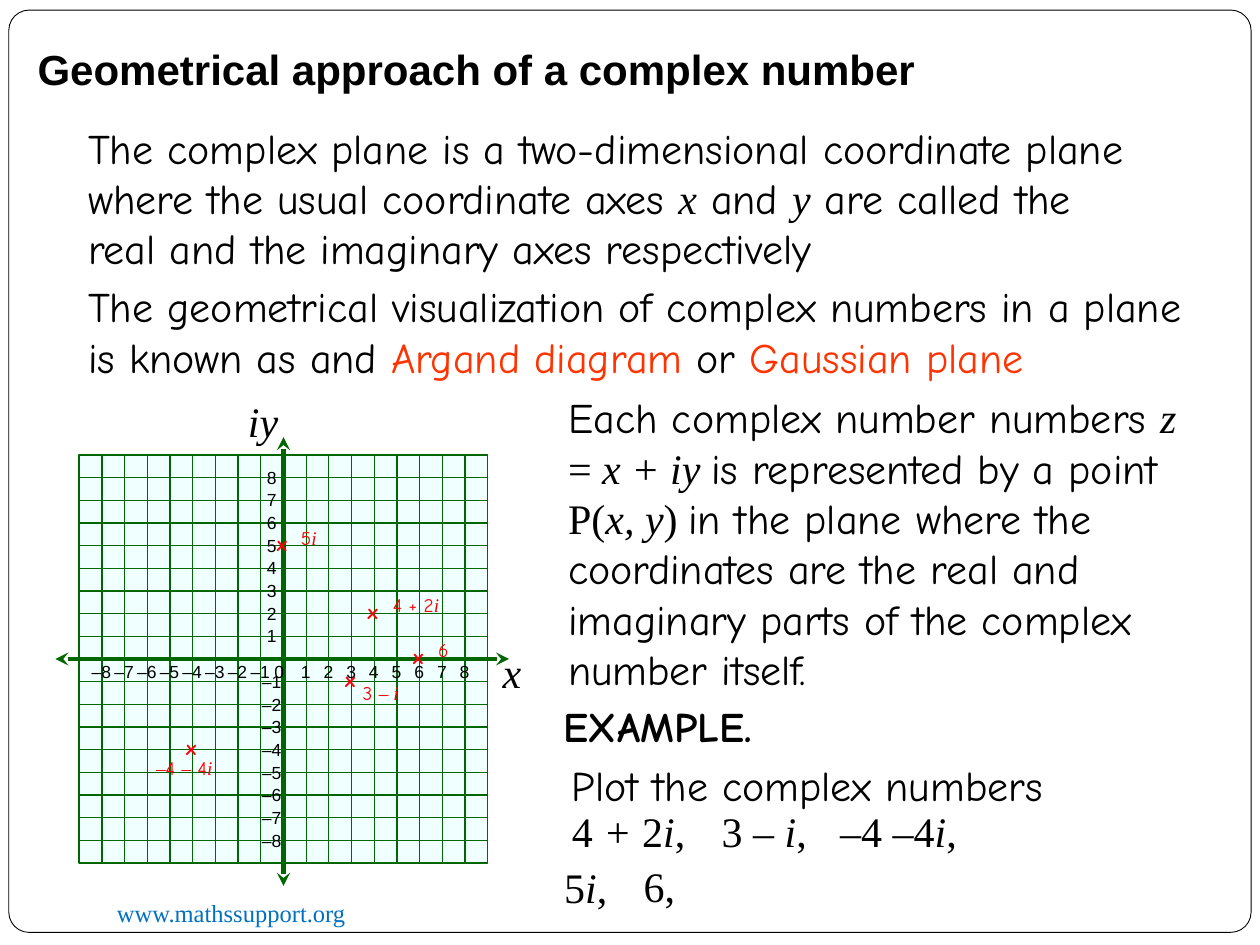
from lxml.etree import SubElement
from pptx import Presentation
from pptx.dml.color import RGBColor
from pptx.enum.shapes import MSO_CONNECTOR, MSO_SHAPE
from pptx.oxml.ns import qn
from pptx.util import Inches, Pt

BLACK, RED, ORANGE, GREEN, BLUE = "000000", "FF0000", "FF3300", "006600", "0070C0"
FACES = {
    "C": {"name": "Comic Neue"},
    "CB": {"name": "Comic Neue", "bold": True},
    "T": {"name": "Times New Roman"},
    "I": {"name": "Times New Roman", "italic": True},
    "A": {"name": "Arial"},
    "AB": {"name": "Arial", "bold": True},
}
POINTS = [
    (4, 2, 0.05, -0.21, 0.6, [("4 + 2", "C"), ("i", "I")]),
    (3, -1, -0.01, -0.05, 0.6, [("3 ", "C"), ("– ", "T"), ("i", "I")]),
    (-4, -4, -0.39, 0, 0.75, [("–", "T"), ("4 ", "C"), ("–", "T"), (" 4", "C"), ("i", "I")]),
    (0, 5, 0.04, -0.2, 0.6, [("5", "C"), ("i", "I")]),
    (6, 0, 0.05, -0.21, 0.6, [("6", "C")]),
]
PLANE = [
    ("The complex plane is a two-dimensional coordinate plane where the usual coordinate axes ", "C"),
    ("x", "I"), (" and ", "C"), ("y", "I"),
    (" are called the real and the imaginary axes respectively", "C"),
]
NAMES = [
    ("The geometrical visualization of complex numbers in a plane is known as and ", "C"),
    ("Argand diagram ", "C", ORANGE), ("or ", "C"), ("Gaussian plane", "C", ORANGE),
]
POINT_RULE = [
    ("Each complex number numbers ", "C"), ("z", "I"), (" = ", "T"), ("x + iy ", "I"),
    ("is represented by a point ", "C"), ("P(", "T"), ("x, y", "I"), (") ", "T"),
    ("in the plane where the coordinates are the real and imaginary parts "
     "of the complex number itself.", "C"),
]
NUMBERS = [
    (0.07, 0.83, [("4", "T"), (" + ", "I"), ("2", "T"), ("i", "I"), (",", "T")]),
    (1.26, 0.83, [("3", "T"), (" – i", "I"), (",", "T")]),
    (2.2, 0.83, [("–", "I"), ("4", "T"), (" –", "I"), ("4", "T"), ("i", "I"), (",", "T")]),
    (0.01, 1.28, [("5", "T"), ("i", "I"), (",", "T")]),
    (0.64, 1.27, [("6,", "T")]),
]


def rgb(color):
    """Turn a hex string into a colour."""
    return RGBColor.from_string(color)


def add_text(s, box, runs, size=24, color=BLACK, wrap=True):
    """Place one paragraph of (text, face[, colour]) runs in a box."""
    tf = s.shapes.add_textbox(*map(Inches, box)).text_frame
    tf.word_wrap = wrap
    p = tf.paragraphs[0]
    for text, face, *own in runs:
        r = p.add_run()
        r.text = text
        for key, value in {"size": Pt(size), **FACES[face]}.items():
            setattr(r.font, key, value)
        r.font.color.rgb = rgb(own[0] if own else color)


def add_panel(s, kind, box, fill, line, width):
    """Place a filled, outlined shape."""
    sp = s.shapes.add_shape(kind, *map(Inches, box))
    sp.shadow.inherit = False
    sp.fill.solid()
    sp.fill.fore_color.rgb = rgb(fill)
    sp.line.color.rgb = rgb(line)
    sp.line.width = Pt(width)
    return sp


def add_line(s, x1, y1, x2, y2, width=0.75, arrows=False):
    """Draw a green line, with stealth arrowheads on an axis."""
    c = s.shapes.add_connector(MSO_CONNECTOR.STRAIGHT, *map(Inches, (x1, y1, x2, y2)))
    c.line.color.rgb = rgb(GREEN)
    c.line.width = Pt(width)
    if arrows:
        ln = c.line._get_or_add_ln()
        for end in ("a:headEnd", "a:tailEnd"):
            SubElement(ln, qn(end), type="stealth")
    SubElement(c._element.spPr, qn("a:effectLst"))


def add_frame(s, x, y, w, h):
    """Draw the rounded slide border and the footer address."""
    sp = add_panel(s, MSO_SHAPE.ROUNDED_RECTANGLE, (x, y, w, h), "FFFFFF", BLACK, 0.5)
    sp.adjustments[0] = 0.022
    add_text(s, (x + 0.76, y + h - 0.32, 3.25, 0.34), [("www.mathssupport.org", "T")], 14, BLUE)


def add_axis_label(s, cx, cy, n):
    """Centre an axis number on a point."""
    w = 0.36 if n < 0 else 0.28
    text = str(n).replace("-", "–")
    add_text(s, (cx - w / 2, cy - 0.135, w, 0.27), [(text, "A")], 10, wrap=False)


def add_argand(s, x, y, size, half=9):
    """Draw the grid, axes, numbers and plotted points of the diagram."""
    step = size / (2 * half)
    ox, oy = x + size / 2, y + size / 2
    add_panel(s, MSO_SHAPE.RECTANGLE, (x, y, size, size), "F0FFFF", GREEN, 1)
    ticks = [n for n in range(1 - half, half) if n]
    for n in ticks:
        add_line(s, x, oy - n * step, x + size, oy - n * step)
        add_line(s, ox + n * step, y, ox + n * step, y + size)
    add_line(s, x - 0.19, oy, x + size + 0.17, oy, 2.5, True)
    add_line(s, ox, y - 0.14, ox, y + size + 0.18, 2.5, True)
    for n in ticks:
        add_axis_label(s, ox + n * step, oy + 0.1, n)
        add_axis_label(s, ox - 0.09, oy - n * step, n)
    add_axis_label(s, ox - 0.03, oy + 0.1, 0)
    add_text(s, (ox - 0.38, y - 0.52, 0.54, 0.5), [("iy", "I")])
    add_text(s, (x + size + 0.02, oy - 0.15, 0.38, 0.5), [("x", "I")])
    for re, im, dx, dy, w, runs in POINTS:
        px, py = ox + re * step, oy - im * step
        add_text(s, (px - 0.15, py - 0.17, 0.43, 0.3), [("x", "CB")], 12, RED)
        add_text(s, (px + dx, py + dy, w, 0.29), runs, 11, RED)


def add_intro(s, x, y, w):
    """Place the title and the two introductory paragraphs."""
    add_text(s, (x, y, 8.05, 0.5), [("Geometrical approach of a complex number", "AB")])
    add_text(s, (x + 0.4, y + 0.62, w - 0.76, 1.31), PLANE)
    add_text(s, (x + 0.4, y + 1.88, w - 0.4, 0.91), NAMES)


def add_example(s, x, y):
    """Place the example heading, the task and its numbers."""
    add_text(s, (x, y, 1.92, 0.5), [("EXAMPLE.", "CB")], wrap=False)
    add_text(s, (x + 0.07, y + 0.47, 4.21, 0.5), [("Plot the complex numbers", "C")])
    for dx, dy, runs in NUMBERS:
        add_text(s, (x + dx, y + dy, 1.33, 0.51), runs)


def main():
    """Build the slide and save it."""
    prs = Presentation()
    prs.slide_width, prs.slide_height = Inches(10), Inches(7.5)
    s = prs.slides.add_slide(prs.slide_layouts[6])
    add_frame(s, 0.07, 0.08, 9.86, 7.32)
    add_argand(s, 0.63, 3.61, 3.24)
    add_intro(s, 0.2, 0.3, 9.35)
    add_text(s, (4.41, 3.06, 5.15, 2.52), POINT_RULE)
    add_example(s, 4.37, 5.51)
    prs.save("out.pptx")


if __name__ == "__main__":
    main()
